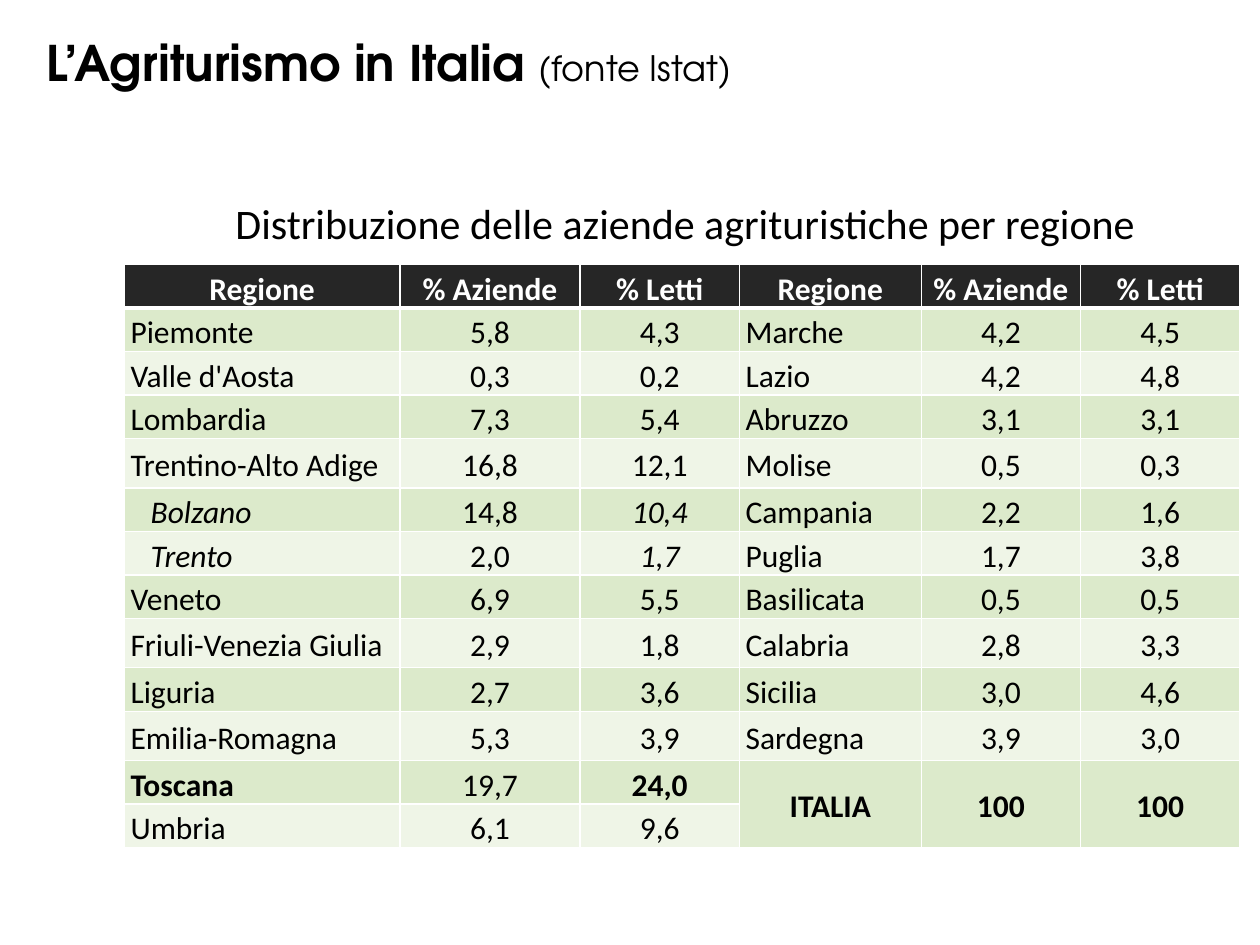
from lxml import etree
from pptx import Presentation
from pptx.dml.color import RGBColor
from pptx.enum.text import MSO_ANCHOR, MSO_AUTO_SIZE, PP_ALIGN
from pptx.oxml.ns import qn
from pptx.util import Pt

LEFT, CENTER, RIGHT = PP_ALIGN.LEFT, PP_ALIGN.CENTER, PP_ALIGN.RIGHT
TOP, MIDDLE = MSO_ANCHOR.TOP, MSO_ANCHOR.MIDDLE
FIT_SHAPE = MSO_AUTO_SIZE.SHAPE_TO_FIT_TEXT

BLACK, WHITE, HEADER_FILL = "000000", "FFFFFF", "262626"
BAND_FILLS = ["EFF5E7", "DCEACB"]  # even rows, odd rows


def add_run(paragraph, text, size, font="Calibri", color=BLACK, bold=False, italic=False):
    run = paragraph.add_run()
    run.text = text
    run.font.name = font
    run.font.size = Pt(size)
    run.font.bold = bold
    run.font.italic = italic
    run.font.color.rgb = RGBColor.from_string(color)


def set_borders(cell, widths):
    """Give a cell white borders; widths maps L, R, T, B to points."""
    properties = cell._tc.get_or_add_tcPr()
    for side, width in widths.items():
        line = etree.SubElement(properties, qn(f"a:ln{side}"), w=str(int(Pt(width))))
        fill = etree.SubElement(line, qn("a:solidFill"))
        etree.SubElement(fill, qn("a:srgbClr"), val=WHITE)


presentation = Presentation()
presentation.slide_width, presentation.slide_height = Pt(720), Pt(540)
slide = presentation.slides.add_slide(presentation.slide_layouts[5])

# Title
title = slide.shapes.title
title.left, title.top, title.width, title.height = Pt(19.5), Pt(15), Pt(658), Pt(41)
title.text_frame.vertical_anchor = TOP
title.text_frame.auto_size = FIT_SHAPE
heading = title.text_frame.paragraphs[0]
heading.alignment = LEFT
add_run(heading, "L’Agriturismo in Italia ", 28, "TeX Gyre Adventor", bold=True)
add_run(heading, "(fonte Istat)", 20, "TeX Gyre Adventor")

# Table caption
caption_box = slide.shapes.add_textbox(Pt(121.7), Pt(105), Pt(534.2), Pt(39))
caption_box.text_frame.word_wrap = False
caption_box.text_frame.auto_size = FIT_SHAPE
caption = caption_box.text_frame.paragraphs[0]
caption.alignment = RIGHT
caption.line_spacing = 1.15
caption.space_after = Pt(3)
add_run(caption, "Distribuzione delle aziende agrituristiche per regione", 24)

# Table content
rows = [
    ["Regione", "% Aziende", "% Letti"] * 2,
    ["Piemonte", "5,8", "4,3", "Marche", "4,2", "4,5"],
    ["Valle d'Aosta", "0,3", "0,2", "Lazio", "4,2", "4,8"],
    ["Lombardia", "7,3", "5,4", "Abruzzo", "3,1", "3,1"],
    ["Trentino-Alto Adige", "16,8", "12,1", "Molise", "0,5", "0,3"],
    ["Bolzano", "14,8", "10,4", "Campania", "2,2", "1,6"],
    ["Trento", "2,0", "1,7", "Puglia", "1,7", "3,8"],
    ["Veneto", "6,9", "5,5", "Basilicata", "0,5", "0,5"],
    ["Friuli-Venezia Giulia", "2,9", "1,8", "Calabria", "2,8", "3,3"],
    ["Liguria", "2,7", "3,6", "Sicilia", "3,0", "4,6"],
    ["Emilia-Romagna", "5,3", "3,9", "Sardegna", "3,9", "3,0"],
    ["Toscana", "19,7", "24,0", "ITALIA", "100", "100"],
    ["Umbria", "6,1", "9,6"],
]
column_widths = [157.5, 103, 91, 104, 91, 91]
tall_regions = {"Trentino-Alto Adige", "Friuli-Venezia Giulia", "Emilia-Romagna"}
provinces = {"Bolzano", "Trento"}
total_row = len(rows) - 2

# Table grid
table = slide.shapes.add_table(
    len(rows), len(column_widths), Pt(71), Pt(151.2), Pt(sum(column_widths)), Pt(333)
).table
for column, width in zip(table.columns, column_widths):
    column.width = Pt(width)
for table_row, values in zip(table.rows, rows):
    table_row.height = Pt(28.2 if values[0] in tall_regions else 24)
for c in range(3, 6):
    table.cell(total_row, c).merge(table.cell(total_row + 1, c))

# Table cells
for r, values in enumerate(rows):
    for c, value in enumerate(values):
        cell = table.cell(r, c)
        is_header = r == 0
        is_total = r == total_row and c >= 3
        emphasized = c in (0, 2)
        set_borders(cell, {"L": 1, "R": 1, "T": 3 if r == 1 else 1, "B": 3 if is_header else 1})
        cell.fill.solid()
        cell.fill.fore_color.rgb = RGBColor.from_string(HEADER_FILL if is_header else BAND_FILLS[r % 2])
        cell.vertical_anchor = MIDDLE
        cell.margin_left = cell.margin_right = Pt(3.6)
        cell.margin_top = cell.margin_bottom = 0

        paragraph = cell.text_frame.paragraphs[0]
        is_region = c % 3 == 0 and not is_header and not is_total
        paragraph.alignment = LEFT if is_region else CENTER
        paragraph.line_spacing = 1.15
        if value in provinces:
            paragraph._p.get_or_add_pPr().set("marL", str(int(Pt(11.5))))
        add_run(
            paragraph, value, 18,
            color=WHITE if is_header else BLACK,
            bold=is_header or is_total or (values[0] == "Toscana" and emphasized),
            italic=values[0] in provinces and emphasized,
        )

presentation.save("out.pptx")
